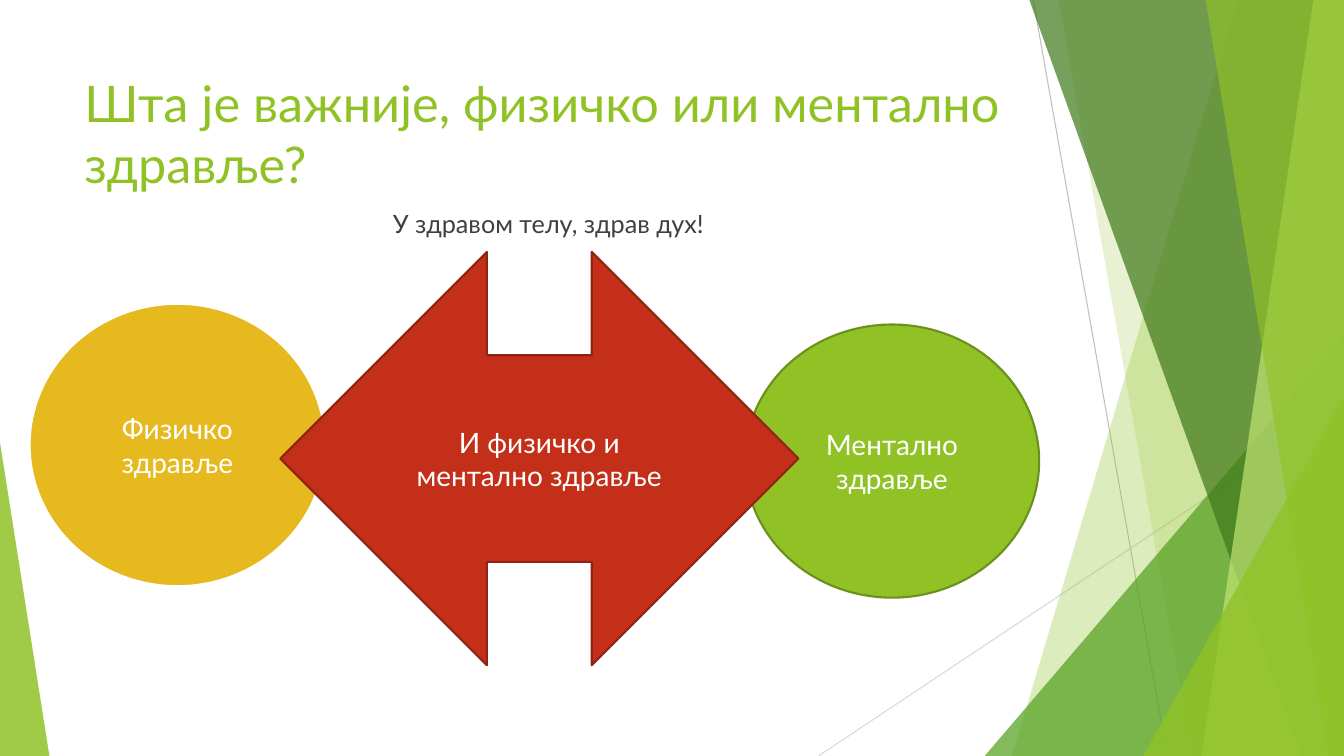
from lxml.etree import SubElement
from pptx import Presentation
from pptx.dml.color import RGBColor
from pptx.enum.shapes import MSO_CONNECTOR, MSO_SHAPE
from pptx.enum.text import MSO_ANCHOR, PP_ALIGN
from pptx.oxml.ns import qn
from pptx.util import Pt

WIDTH, HEIGHT = 960, 540
SHARD_TOP = -0.6
FONT = "Lato"

COLOURS = {
    "lime": "90C226", "green": "54A021", "forest": "3F7819", "pale": "C0E474",
    "lime edge": "6B901C", "yellow": "E6B91E", "red": "C42F1A", "red edge": "912313",
    "white": "FFFFFF", "text": "404040", "grey": "BFBFBF", "light grey": "D9D9D9",
}

# Start x, start y, end x, end y, colour
RAYS = [
    (738, 0, 833.8, HEIGHT, "grey"),
    (WIDTH, 290.2, 584.6, HEIGHT, "light grey"),
]

# Shards reach the right edge: top left x, bottom left x
# Triangles stand on the bottom edge: left, top, width, apex position
DECOR = [
    ("shard", (884.2, 722.9), "lime", 30),
    ("shard", (756, 851.8), "lime", 20),
    ("triangle", (703.4, 239.8, 256.6, 1), "green", 72),
    ("shard", (735.1, 929.5), "forest", 70),
    ("shard", (938.2, 858.2), "pale", 70),
    ("shard", (861.1, 949), "lime", 65),
    ("triangle", (816.5, 283, 143.5, 1), "lime", 80),
    ("triangle", (0, 316.1, 35.3, 0), "lime", 85),
]

# Text, left, top, width, height, size, colour, alignment
TEXTS = [
    ("Шта је важније, физичко или ментално здравље?",
     53.3, 48.2, 676.8, 103.7, 36, "lime", PP_ALIGN.LEFT),
    ("У здравом телу, здрав дух!",
     53.3, 145.4, 676.8, 330.5, 18, "text", PP_ALIGN.CENTER),
]

# Text, shape, left, top, width, height, fill, line, line width
HEALTH = [
    ("Физичко здравље", MSO_SHAPE.OVAL,
     20.9, 216.7, 211.7, 202.3, "yellow", "white", 2),
    ("Ментално здравље", MSO_SHAPE.OVAL,
     532.1, 231.8, 210.2, 195.1, "lime", "lime edge", 1.5),
    ("И физичко и ментално здравље", MSO_SHAPE.LEFT_RIGHT_ARROW,
     200.2, 180, 370.1, 295.2, "red", "red edge", 1.5),
]


def colour(name):
    return RGBColor.from_string(COLOURS[name])


def paint(shape, fill, opacity=100):
    shape.shadow.inherit = False
    shape.fill.solid()
    shape.fill.fore_color.rgb = colour(fill)
    if opacity < 100:
        tint = shape.fill._xPr.find(qn("a:solidFill"))[0]
        SubElement(tint, qn("a:alpha"), val=str(opacity * 1000))


def write(shape, text, size, ink, alignment, anchor):
    frame = shape.text_frame
    frame.word_wrap = True
    frame.vertical_anchor = anchor
    para = frame.paragraphs[0]
    para.text = text
    para.alignment = alignment
    para.font.name = FONT
    para.font.size = Pt(size)
    para.font.color.rgb = colour(ink)


def add_shard(page, top_left, bottom_left):
    builder = page.shapes.build_freeform(Pt(top_left), Pt(SHARD_TOP))
    corners = [(WIDTH, SHARD_TOP), (WIDTH, HEIGHT), (bottom_left, HEIGHT)]
    builder.add_line_segments([(Pt(x), Pt(y)) for x, y in corners], close=True)
    return builder.convert_to_shape()


def add_triangle(page, left, top, width, apex):
    triangle = page.shapes.add_shape(
        MSO_SHAPE.ISOSCELES_TRIANGLE, Pt(left), Pt(top), Pt(width), Pt(HEIGHT - top))
    triangle.adjustments[0] = apex
    return triangle


def main():
    deck = Presentation()
    deck.slide_width, deck.slide_height = Pt(WIDTH), Pt(HEIGHT)
    page = deck.slides.add_slide(deck.slide_layouts[6])

    # Thin rays behind the shards
    for *ends, ink in RAYS:
        ray = page.shapes.add_connector(MSO_CONNECTOR.STRAIGHT, *map(Pt, ends))
        ray.line.color.rgb = colour(ink)
        ray.line.width = Pt(0.75)
        SubElement(ray._element.spPr, qn("a:effectLst"))

    # Translucent shards and triangles
    makers = {"shard": add_shard, "triangle": add_triangle}
    for kind, geometry, fill, opacity in DECOR:
        piece = makers[kind](page, *geometry)
        paint(piece, fill, opacity)
        piece.line.fill.background()

    # Title and motto
    for text, *place, size, ink, alignment in TEXTS:
        box = page.shapes.add_textbox(*map(Pt, place))
        write(box, text, size, ink, alignment, MSO_ANCHOR.TOP)

    # Two kinds of health and the arrow joining them
    for text, kind, *place, fill, edge, weight in HEALTH:
        shape = page.shapes.add_shape(kind, *map(Pt, place))
        paint(shape, fill)
        shape.line.color.rgb = colour(edge)
        shape.line.width = Pt(weight)
        write(shape, text, 20, "white", PP_ALIGN.CENTER, MSO_ANCHOR.MIDDLE)

    deck.save("out.pptx")


if __name__ == "__main__":
    main()
